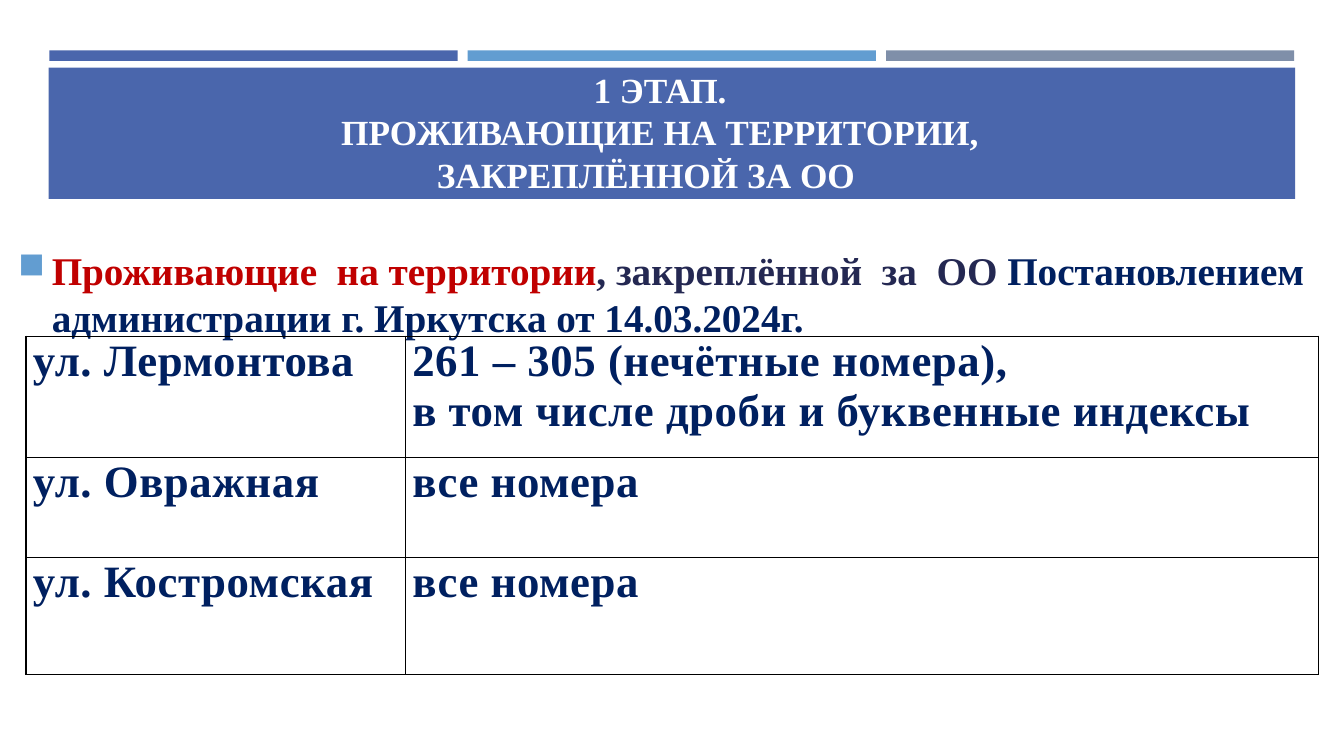
from lxml.etree import SubElement
from pptx import Presentation
from pptx.dml.color import RGBColor
from pptx.enum.shapes import MSO_SHAPE
from pptx.enum.text import PP_ALIGN
from pptx.oxml.ns import qn
from pptx.util import Pt

FONT = "Times New Roman"
NAVY = "002060"
BLUE = "4A66AC"
SKY = "629DD1"


def color(value):
    return RGBColor.from_string(value)


def add_span(para, text, size, value):
    span = para.add_run()
    span.text = text
    span.font.name = FONT
    span.font.size = Pt(size)
    span.font.bold = True
    span.font.color.rgb = color(value)
    return span


deck = Presentation()
deck.slide_width = Pt(960)
deck.slide_height = Pt(540)
page = deck.slides.add_slide(deck.slide_layouts[6])

bands = [(35.3 + 298.8 * index, 36, 291.6, 7.5, value)
         for index, value in enumerate([BLUE, SKY, "7F8FA9"])]
bands.append((34.8, 48.3, 890.4, 93.8, BLUE))
for left, top, width, height, value in bands:
    band = page.shapes.add_shape(MSO_SHAPE.RECTANGLE, Pt(left), Pt(top), Pt(width), Pt(height))
    band.shadow.inherit = False
    band.fill.solid()
    band.fill.fore_color.rgb = color(value)
    band.line.fill.background()

frames = []
for left, top, width, height in [(34, 48.3, 875, 92), (13, 175.7, 925, 68)]:
    frame = page.shapes.add_textbox(Pt(left), Pt(top), Pt(width), Pt(height)).text_frame
    frame.word_wrap = True
    frame.margin_left = frame.margin_right = frame.margin_top = frame.margin_bottom = 0
    frames.append(frame)
title, body = frames

title_lines = ["1 ЭТАП.", "ПРОЖИВАЮЩИЕ НА ТЕРРИТОРИИ,", "ЗАКРЕПЛЁННОЙ ЗА ОО"]
for index, line in enumerate(title_lines):
    para = title.add_paragraph() if index else title.paragraphs[0]
    para.alignment = PP_ALIGN.CENTER
    para.line_spacing = Pt(30.4)
    add_span(para, line, 25.2, "FFFFFF")
para._p.get_or_add_pPr().set("marR", str(Pt(20)))

para = body.paragraphs[0]
para.line_spacing = Pt(33.6)
settings = para._p.get_or_add_pPr()
settings.set("marL", str(Pt(24)))
settings.set("indent", str(Pt(-24)))
SubElement(SubElement(settings, qn("a:buClr")), qn("a:srgbClr")).set("val", SKY)
SubElement(settings, qn("a:buSzPct")).set("val", "92000")
SubElement(settings, qn("a:buChar")).set("char", "■")
for text, value in [
    ("Проживающие  на территории", "C00000"),
    (", закреплённой  за  ОО ", "242852"),
    ("Постановлением администрации г. Иркутска от 14.03.2024г.", NAVY),
]:
    add_span(para, text, 28, value)

streets = [
    ("ул. Лермонтова", "261 – 305 (нечётные номера),\nв том числе дроби и буквенные индексы"),
    ("ул. Овражная", "все номера"),
    ("ул. Костромская", "все номера"),
]
widths = [271, 652.5]
heights = [86.6, 71.4, 83.5]
table = page.shapes.add_table(3, 2, Pt(18.5), Pt(240.2), Pt(sum(widths)), Pt(sum(heights))).table
table.first_row = False
table.horz_banding = False
for column, width in zip(table.columns, widths):
    column.width = Pt(width)
for row, height, texts in zip(table.rows, heights, streets):
    row.height = Pt(height)
    for cell, text in zip(row.cells, texts):
        cell.margin_left = cell.margin_right = Pt(5)
        cell.margin_top = cell.margin_bottom = 0
        for index, line in enumerate(text.split("\n")):
            para = cell.text_frame.add_paragraph() if index else cell.text_frame.paragraphs[0]
            span = add_span(para, line, 32, NAVY)
            span.font._element.set("spc", "40")
        borders = cell._tc.get_or_add_tcPr()
        for side in ("lnL", "lnR", "lnT", "lnB"):
            edge = SubElement(borders, qn("a:" + side), w=str(Pt(1)))
            fill = SubElement(edge, qn("a:solidFill"))
            SubElement(fill, qn("a:srgbClr")).set("val", "000000")
        cell.fill.background()

deck.save("out.pptx")
